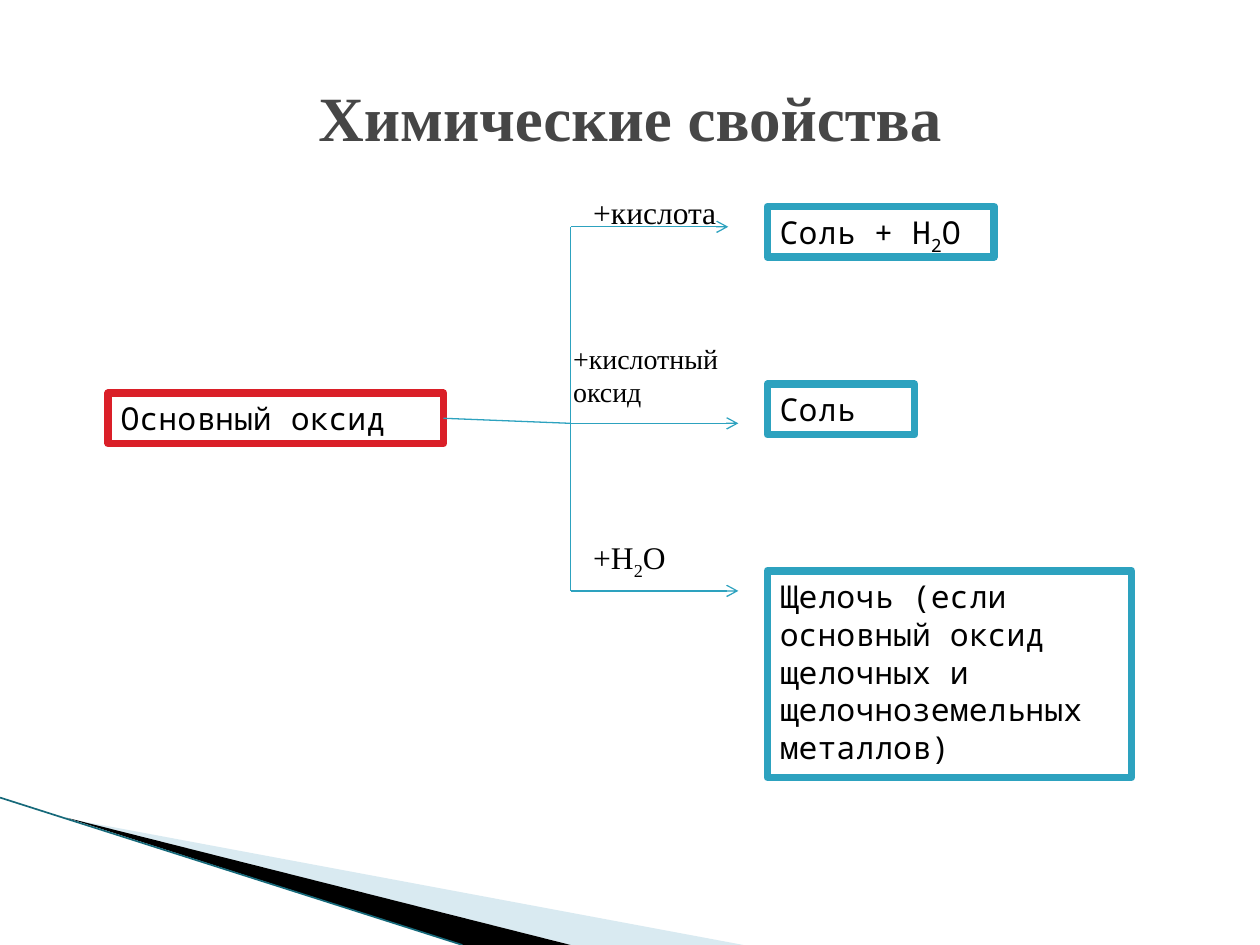
from dataclasses import dataclass

from lxml import etree
from pptx import Presentation
from pptx.dml.color import RGBColor
from pptx.enum.shapes import MSO_CONNECTOR, MSO_SHAPE
from pptx.enum.text import MSO_ANCHOR, MSO_AUTO_SIZE, PP_ALIGN
from pptx.oxml.ns import qn
from pptx.util import Inches, Pt

STRAIGHT = MSO_CONNECTOR.STRAIGHT
RECT = MSO_SHAPE.RECTANGLE
LEFT, CENTER = PP_ALIGN.LEFT, PP_ALIGN.CENTER
TOP, MIDDLE = MSO_ANCHOR.TOP, MSO_ANCHOR.MIDDLE
GROW = MSO_AUTO_SIZE.SHAPE_TO_FIT_TEXT
RIGHT_SIDE = 3


@dataclass(frozen=True)
class Theme:
    serif: str = "Times New Roman"
    mono: str = "Noto Sans Mono"
    title: str = "464646"
    ink: str = "000000"
    paper: str = "FFFFFF"
    red: str = "DA1F28"
    teal: str = "2DA2BF"
    pale: str = "D9EAF1"
    edge: str = "16697A"
    title_size: float = 36
    body_size: float = 18
    small_size: float = 16
    frame: float = 4.33
    thin: float = 0.75
    edge_width: float = 0.95


@dataclass(frozen=True)
class Area:
    left: float
    top: float
    width: float
    height: float

    def emu(self) -> tuple:
        return tuple(map(Inches, (self.left, self.top, self.width, self.height)))


@dataclass(frozen=True)
class Branch:
    """One reaction: label over an arrow, then the product box."""
    label: str
    label_area: Area
    size: float
    arrow_y: float
    arrow_end: float
    product: str
    product_area: Area


THEME = Theme()
TRUNK_X = 4.53
PRODUCT_X = 6.09
ROOT = Area(0.86, 3.12, 2.66, 0.4)
# Text between bars is set as a subscript.
BRANCHES = (
    Branch("+кислота", Area(4.61, 1.48, 1.25, 0.4), THEME.body_size, 1.8, 5.78,
           "Соль + H|2|O", Area(PRODUCT_X, 1.64, 1.8, 0.4)),
    Branch("+кислотный оксид", Area(4.45, 2.66, 1.88, 0.64), THEME.small_size, 3.36, 5.86,
           "Соль", Area(PRODUCT_X, 3.05, 1.17, 0.4)),
    Branch("+H|2|O", Area(4.61, 4.22, 1.09, 0.4), THEME.body_size, 4.69, 5.86,
           "Щелочь (если основный оксид щелочных и щелочноземельных металлов)",
           Area(PRODUCT_X, 4.53, 2.89, 1.64)),
)
WEDGES = (
    (THEME.pale, ((0.55, 6.5), (5.9, 7.5), (4.53, 7.5))),
    (THEME.ink, ((0.53, 6.49), (4.53, 7.5), (3.67, 7.5))),
)


def rgb(code: str) -> RGBColor:
    return RGBColor.from_string(code)


def write(shape, text: str, font: str, size: float, color: str = THEME.ink,
          bold: bool = False, align=LEFT, anchor=TOP) -> None:
    frame = shape.text_frame
    frame.word_wrap = True
    frame.vertical_anchor = anchor
    para = frame.paragraphs[0]
    para.alignment = align
    for index, part in enumerate(text.split("|")):
        run = para.add_run()
        run.text = part
        run.font.name = font
        run.font.size = Pt(size)
        run.font.bold = bold
        run.font.color.rgb = rgb(color)
        if index % 2:
            run.font._element.set("baseline", "-25000")


def add_label(slide, area: Area, text: str, size: float) -> None:
    box = slide.shapes.add_textbox(*area.emu())
    write(box, text, THEME.serif, size)
    box.text_frame.auto_size = GROW


def add_box(slide, area: Area, text: str, color: str):
    box = slide.shapes.add_shape(RECT, *area.emu())
    box.shadow.inherit = False
    box.fill.solid()
    box.fill.fore_color.rgb = rgb(THEME.paper)
    box.line.color.rgb = rgb(color)
    box.line.width = Pt(THEME.frame)
    write(box, text, THEME.mono, THEME.body_size)
    box.text_frame.auto_size = GROW
    return box


def add_line(slide, start: tuple, end: tuple, color: str = THEME.teal,
             width: float = THEME.thin, arrow: bool = False):
    line = slide.shapes.add_connector(STRAIGHT, *map(Inches, start + end))
    line.line.color.rgb = rgb(color)
    line.line.width = Pt(width)
    if arrow:
        etree.SubElement(line.line._get_or_add_ln(), qn("a:tailEnd"), type="arrow")
    etree.SubElement(line._element.spPr, qn("a:effectLst"))
    return line


def add_wedge(slide, color: str, points: tuple) -> None:
    first, *rest = [tuple(map(Inches, point)) for point in points]
    pen = slide.shapes.build_freeform(*first)
    pen.add_line_segments(rest, close=True)
    wedge = pen.convert_to_shape()
    wedge.shadow.inherit = False
    wedge.fill.solid()
    wedge.fill.fore_color.rgb = rgb(color)
    wedge.line.fill.background()


def main() -> None:
    deck = Presentation()
    deck.slide_width, deck.slide_height = Inches(10), Inches(7.5)
    slide = deck.slides.add_slide(deck.slide_layouts[6])

    for color, points in WEDGES:
        add_wedge(slide, color, points)
    add_line(slide, (0, 6.33), (3.67, 7.5), THEME.edge, THEME.edge_width)

    title = slide.shapes.add_textbox(*Area(0.5, 0.3, 9, 1.25).emu())
    write(title, "Химические свойства", THEME.serif, THEME.title_size,
          THEME.title, True, CENTER, MIDDLE)

    root = add_box(slide, ROOT, "Основный оксид", THEME.red)
    stem = add_line(slide, (ROOT.left + ROOT.width, ROOT.top + ROOT.height / 2),
                    (TRUNK_X, BRANCHES[1].arrow_y))
    stem.begin_connect(root, RIGHT_SIDE)
    add_line(slide, (TRUNK_X, BRANCHES[0].arrow_y), (TRUNK_X, BRANCHES[-1].arrow_y))

    for branch in BRANCHES:
        add_line(slide, (TRUNK_X, branch.arrow_y), (branch.arrow_end, branch.arrow_y),
                 arrow=True)
        add_label(slide, branch.label_area, branch.label, branch.size)
        add_box(slide, branch.product_area, branch.product, THEME.teal)

    deck.save("out.pptx")


if __name__ == "__main__":
    main()
